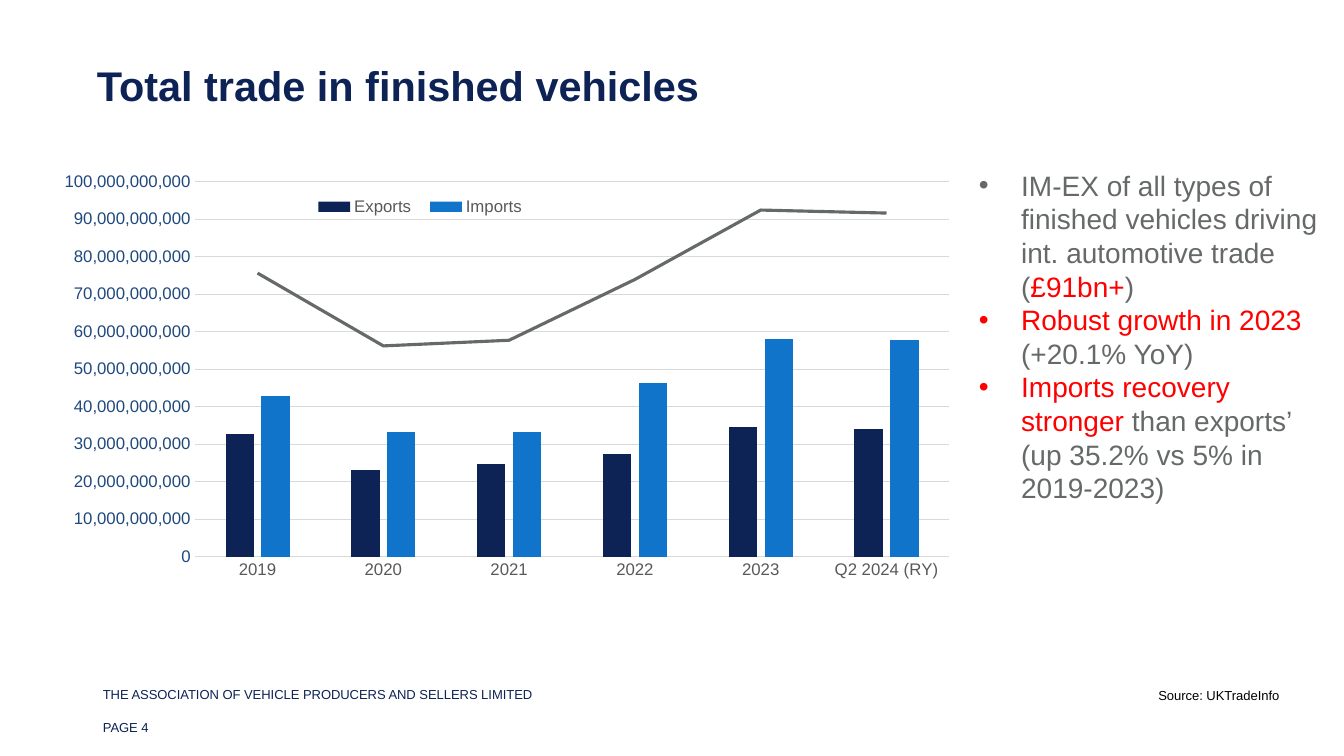
from lxml import etree
from pptx import Presentation
from pptx.chart.data import CategoryChartData
from pptx.dml.color import RGBColor
from pptx.enum.chart import (XL_CHART_TYPE, XL_LEGEND_POSITION, XL_MARKER_STYLE,
                             XL_TICK_MARK)
from pptx.oxml import parse_xml
from pptx.oxml.ns import nsdecls, qn
from pptx.util import Inches, Pt

COLUMNS = XL_CHART_TYPE.COLUMN_CLUSTERED
LEGEND_BOTTOM = XL_LEGEND_POSITION.BOTTOM
NO_MARKER = XL_MARKER_STYLE.NONE
NO_TICK = XL_TICK_MARK.NONE

FONT = "Arial"
NAVY, BLUE, GREY, RED, BLACK = "0D2255", "1074CB", "666969", "FF0000", "000000"
LABEL_GREY, AXIS_BLUE, GRID_GREY = "595959", "1F497D", "D9D9D9"

YEARS = ["2019", "2020", "2021", "2022", "2023", "Q2 2024 (RY)"]
# Trade in billions of pounds: name, colour, values
TRADE = [
    ("Exports", NAVY, [32.8, 23.0, 24.6, 27.5, 34.5, 34.0]),
    ("Imports", BLUE, [42.7, 33.2, 33.2, 46.2, 58.0, 57.7]),
    ("Total", GREY, [75.6, 56.2, 57.7, 73.9, 92.4, 91.6]),
]
BILLION = 10 ** 9

# Each bullet is a list of (text, colour)
BULLETS = [
    [("IM-EX of all types of finished vehicles driving int. automotive trade (", GREY),
     ("£91bn+", RED), (")", GREY)],
    [("Robust growth in 2023 ", RED), ("(+20.1% YoY)", GREY)],
    [("Imports recovery stronger ", RED),
     ("than exports’ (up 35.2% vs 5% in 2019-2023)", GREY)],
]


def rgb(colour):
    return RGBColor.from_string(colour)


def set_font(font, size, colour, bold=False):
    values = {"name": FONT, "size": Pt(size), "bold": bold}
    for name, value in values.items():
        setattr(font, name, value)
    font.color.rgb = rgb(colour)


def set_line(line, colour, width):
    line.color.rgb = rgb(colour)
    line.width = Pt(width)


def add_bullet(para, indent):
    props = para._p.get_or_add_pPr()
    props.set("marL", str(Inches(indent)))
    props.set("indent", str(Inches(-indent)))
    etree.SubElement(props, qn("a:buFont")).set("typeface", FONT)
    etree.SubElement(props, qn("a:buChar")).set("char", "•")


def add_text(page, place, paras, size, insets=(0.1, 0.05), indent=0, bold=False):
    box = page.shapes.add_textbox(*map(Inches, place))
    frame = box.text_frame
    across, down = map(Inches, insets)
    values = {"word_wrap": True, "margin_left": across, "margin_right": across,
              "margin_top": down, "margin_bottom": down}
    for name, value in values.items():
        setattr(frame, name, value)
    for number, spans in enumerate(paras):
        para = frame.add_paragraph() if number else frame.paragraphs[0]
        if indent:
            add_bullet(para, indent)
        for text, colour in spans:
            span = para.add_run()
            span.text = text
            set_font(span.font, size, colour, bold)


def set_layout(parent, left, top, width, height, inner=False):
    """Place a plot area or legend by fractions of the chart."""
    for old in parent.findall(qn("c:layout")):
        parent.remove(old)
    target = '<c:layoutTarget val="inner"/>' if inner else ""
    layout = parse_xml(
        f'<c:layout {nsdecls("c")}><c:manualLayout>{target}'
        '<c:xMode val="edge"/><c:yMode val="edge"/>'
        f'<c:x val="{left}"/><c:y val="{top}"/><c:w val="{width}"/><c:h val="{height}"/>'
        '</c:manualLayout></c:layout>')
    if inner:
        parent.insert(0, layout)
    else:
        parent.find(qn("c:legendPos")).addnext(layout)


def move_last_series_to_line(chart):
    bars = chart.plots[0]._element
    series = bars.findall(qn("c:ser"))[-1]
    for bar_only in series.findall(qn("c:invertIfNegative")):
        series.remove(bar_only)
    lines = parse_xml(f'<c:lineChart {nsdecls("c")}><c:grouping val="standard"/>'
                      '<c:varyColors val="0"/></c:lineChart>')
    lines.append(series)
    etree.SubElement(lines, qn("c:marker")).set("val", "1")
    for axis in bars.findall(qn("c:axId")):
        etree.SubElement(lines, qn("c:axId")).set("val", axis.get("val"))
    bars.addnext(lines)


def style_axes(chart):
    years, money = chart.category_axis, chart.value_axis
    for axis, colour in ((years, LABEL_GREY), (money, AXIS_BLUE)):
        axis.major_tick_mark = axis.minor_tick_mark = NO_TICK
        set_font(axis.tick_labels.font, 12, colour)
    set_line(years.format.line, GRID_GREY, 0.75)
    money.format.line.fill.background()
    set_line(money.major_gridlines.format.line, GRID_GREY, 0.75)
    money.minimum_scale, money.maximum_scale = 0, 100 * BILLION
    money.major_unit = 10 * BILLION
    money.tick_labels.number_format = "#,##0"
    money.tick_labels.number_format_is_linked = False


def style_legend(chart):
    chart.has_legend = True
    legend = chart.legend
    legend.position = LEGEND_BOTTOM
    legend.include_in_layout = False
    set_font(legend.font, 12, LABEL_GREY)
    set_layout(legend._element, 0.28, 0.06, 0.25, 0.07)
    # The total line has no legend entry
    legend._element.find(qn("c:legendPos")).addnext(parse_xml(
        f'<c:legendEntry {nsdecls("c")}><c:idx val="{len(TRADE) - 1}"/>'
        '<c:delete val="1"/></c:legendEntry>'))


def add_trade_chart(page, place):
    data = CategoryChartData(number_format="#,##0")
    data.categories = YEARS
    for name, _, values in TRADE:
        data.add_series(name, [round(value * BILLION) for value in values])
    chart = page.shapes.add_chart(COLUMNS, *map(Inches, place), data).chart
    chart.has_title = False
    set_font(chart.font, 10, BLACK)
    move_last_series_to_line(chart)

    bars, lines = chart.plots
    bars.gap_width, bars.overlap = 219, -27
    bars.vary_by_categories = False
    for series, (_, colour, _) in zip(bars.series, TRADE):
        series.format.fill.solid()
        series.format.fill.fore_color.rgb = rgb(colour)
    total = lines.series[0]
    total.smooth = False
    total.marker.style = NO_MARKER
    set_line(total.format.line, TRADE[-1][1], 2.25)

    style_axes(chart)
    style_legend(chart)
    plot_area = chart._chartSpace.chart.plotArea
    set_layout(plot_area, 0.16, 0.04, 0.82, 0.82, inner=True)


def main():
    deck = Presentation()
    deck.slide_width, deck.slide_height = Inches(13.33), Inches(7.5)
    page = deck.slides.add_slide(deck.slide_layouts[6])

    # Title
    add_text(page, (0.89, 0.56, 11.36, 0.55),
             [[("Total trade in finished vehicles", NAVY)]], 29.6, (0.07, 0.04), bold=True)

    # Chart and comments
    add_trade_chart(page, (0.47, 1.62, 9.13, 4.54))
    add_text(page, (9.61, 1.62, 3.57, 4.14), BULLETS, 20, indent=0.42)

    # Footer and source
    footer = "THE ASSOCIATION OF VEHICLE PRODUCERS AND SELLERS LIMITED"
    add_text(page, (0.89, 6.74, 6.74, 0.29), [[(footer, NAVY)]], 9.3, (0.13, 0.07))
    add_text(page, (0.89, 7.07, 1.11, 0.29), [[("PAGE 4", NAVY)]], 9.3, (0.13, 0.07))
    add_text(page, (11.39, 6.77, 1.57, 0.35), [[("Source: UKTradeInfo", BLACK)]], 9.3)

    deck.save("out.pptx")


if __name__ == "__main__":
    main()
